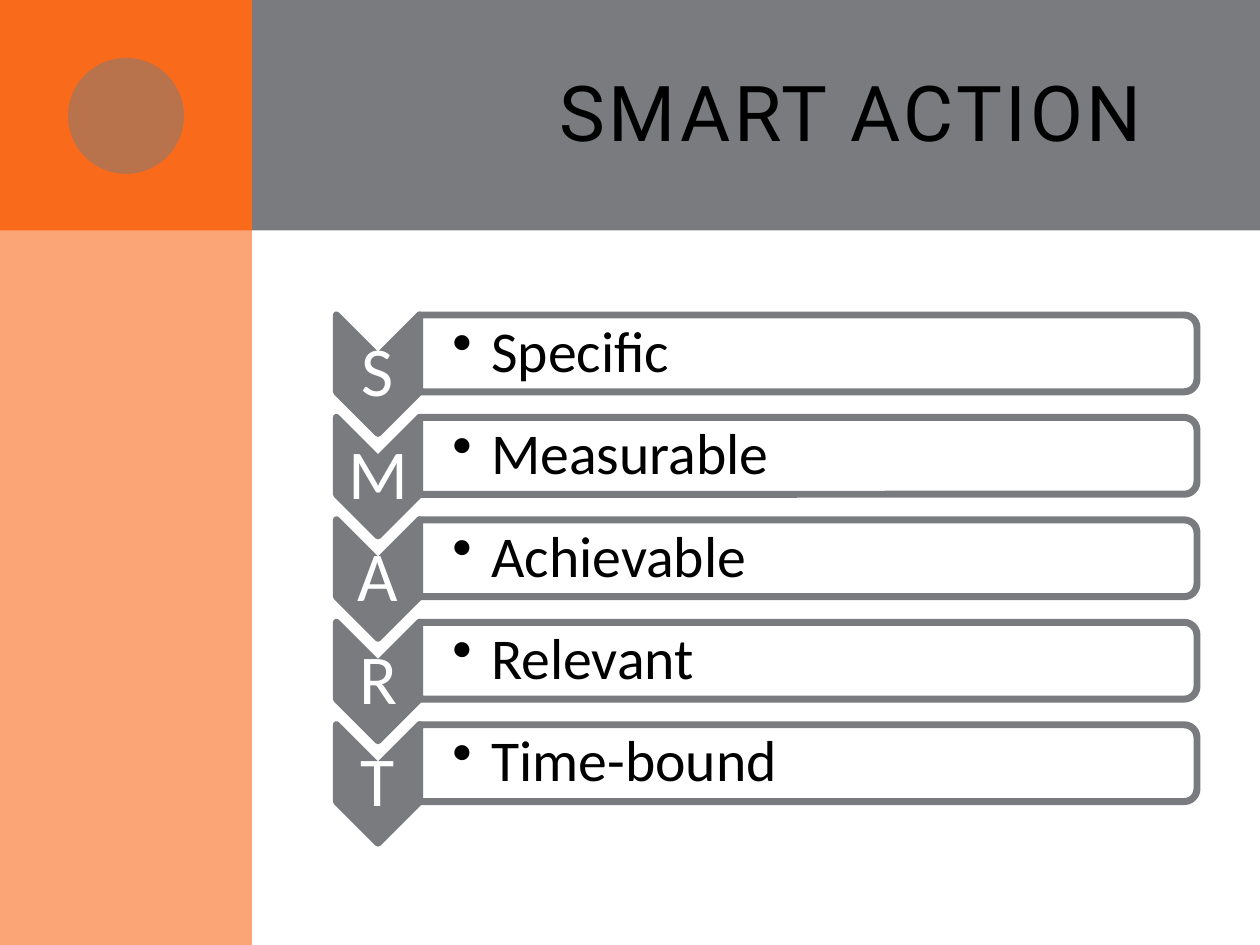
"""Build the SMART ACTION slide: five lettered chevrons, each with a labelled bar."""
from dataclasses import dataclass

from lxml.etree import SubElement
from pptx import Presentation
from pptx.dml.color import RGBColor
from pptx.enum.shapes import MSO_SHAPE as Preset
from pptx.enum.text import MSO_ANCHOR as Anchor, PP_ALIGN as Align
from pptx.oxml.ns import qn
from pptx.util import Inches, Pt

COLORS = {
    "gray": "797B7E",
    "orange": "F96A1B",
    "peach": "FBA576",
    "white": "FFFFFF",
    "black": "000000",
}
ROW_PITCH = 0.813
CHEVRON_CENTER_X, CHEVRON_CENTER_Y = 3.0, 2.97
BAR_LEFT, BAR_CENTER_Y, BAR_LENGTH, BAR_HEIGHT = 3.33, 2.805, 6.17, 0.61


@dataclass(frozen=True)
class Box:
    left: float
    top: float
    width: float
    height: float

    def lengths(self) -> tuple:
        return tuple(Inches(n) for n in (self.left, self.top, self.width, self.height))


@dataclass(frozen=True)
class TextStyle:
    font: str
    size: float
    color: str
    align: Align = Align.LEFT


@dataclass(frozen=True)
class Panel:
    preset: Preset
    box: Box
    color: str
    opacity: int = 100


TITLE_STYLE = TextStyle("Roboto", 44, "black", Align.RIGHT)
LETTER_STYLE = TextStyle("Calibri", 40, "white", Align.CENTER)
LABEL_STYLE = TextStyle("Calibri", 33, "black")
PANELS = (
    Panel(Preset.RECTANGLE, Box(0.5, 0, 9.5, 1.83), "gray"),
    Panel(Preset.RECTANGLE, Box(0, 0, 2, 7.5), "peach"),
    Panel(Preset.RECTANGLE, Box(0, 0, 2, 1.83), "orange"),
    Panel(Preset.OVAL, Box(0.54, 0.46, 0.92, 0.92), "gray", 50),
)
LABELS = ("Specific", "Measurable", "Achievable", "Relevant", "Time-bound")


def rgb(name: str) -> RGBColor:
    return RGBColor.from_string(COLORS[name])


def add_panel(slide, panel: Panel):
    shape = slide.shapes.add_shape(panel.preset, *panel.box.lengths())
    shape.shadow.inherit = False
    shape.fill.solid()
    shape.fill.fore_color.rgb = rgb(panel.color)
    shape.line.fill.background()
    if panel.opacity < 100:
        color = shape.element.spPr.find(qn("a:solidFill"))[0]
        SubElement(color, qn("a:alpha"), val=str(panel.opacity * 1000))
    return shape


def add_upright(slide, preset: Preset, center_x: float, center_y: float,
                length: float, thickness: float, color: str, opacity: int = 100) -> None:
    box = Box(center_x - length / 2, center_y - thickness / 2, length, thickness)
    shape = add_panel(slide, Panel(preset, box, color, opacity))
    shape.rotation = 90
    shape.line.color.rgb = rgb("gray")
    shape.line.width = Pt(4)


def write(frame, text: str, style: TextStyle):
    frame.word_wrap = True
    frame.vertical_anchor = Anchor.MIDDLE
    paragraph = frame.paragraphs[0]
    paragraph.alignment = style.align
    run = paragraph.add_run()
    run.text = text
    run.font.name = style.font
    run.font.size = Pt(style.size)
    run.font.color.rgb = rgb(style.color)
    return paragraph


def add_text(slide, box: Box, text: str, style: TextStyle, inset: float, left_inset: float):
    frame = slide.shapes.add_textbox(*box.lengths()).text_frame
    frame.margin_left = Inches(left_inset)
    frame.margin_top = frame.margin_right = frame.margin_bottom = Inches(inset)
    paragraph = write(frame, text, style)
    paragraph.line_spacing = 0.9
    return paragraph


def add_bullet(paragraph) -> None:
    properties = paragraph.runs[0].font and paragraph._p.get_or_add_pPr()
    properties.set("marL", str(Inches(0.31)))
    properties.set("indent", str(-Inches(0.31)))
    SubElement(properties, qn("a:buChar"), char="•")


def add_row(slide, index: int, label: str) -> None:
    offset = index * ROW_PITCH
    chevron_y, bar_y = CHEVRON_CENTER_Y + offset, BAR_CENTER_Y + offset
    add_upright(slide, Preset.CHEVRON, CHEVRON_CENTER_X, chevron_y, 0.94, 0.66, "gray")
    add_text(slide, Box(2.67, chevron_y - 0.14, 0.66, 0.28), label[0], LETTER_STYLE, 0.03, 0.03)
    add_upright(slide, Preset.ROUND_2_SAME_RECTANGLE, BAR_LEFT + BAR_LENGTH / 2, bar_y,
                BAR_HEIGHT, BAR_LENGTH, "white", 90)
    label_box = Box(BAR_LEFT, bar_y - 0.275, 6.14, 0.55)
    add_bullet(add_text(slide, label_box, label, LABEL_STYLE, 0.02, 0.26))


def add_title(slide, text: str) -> None:
    title = slide.shapes.title
    title.left, title.top, title.width, title.height = Box(2.67, 0.25, 6.83, 1.25).lengths()
    paragraph = write(title.text_frame, text, TITLE_STYLE)
    properties = paragraph.runs[0].font._element
    properties.set("spc", "200")
    properties.set("cap", "small")
    title.element.getparent().append(title.element)


def main() -> None:
    presentation = Presentation()
    presentation.slide_width, presentation.slide_height = Inches(10), Inches(7.5)
    slide = presentation.slides.add_slide(presentation.slide_layouts[5])
    for panel in PANELS:
        add_panel(slide, panel)
    add_title(slide, "SMART ACTION")
    for index, label in enumerate(LABELS):
        add_row(slide, index, label)
    presentation.save("out.pptx")


if __name__ == "__main__":
    main()
